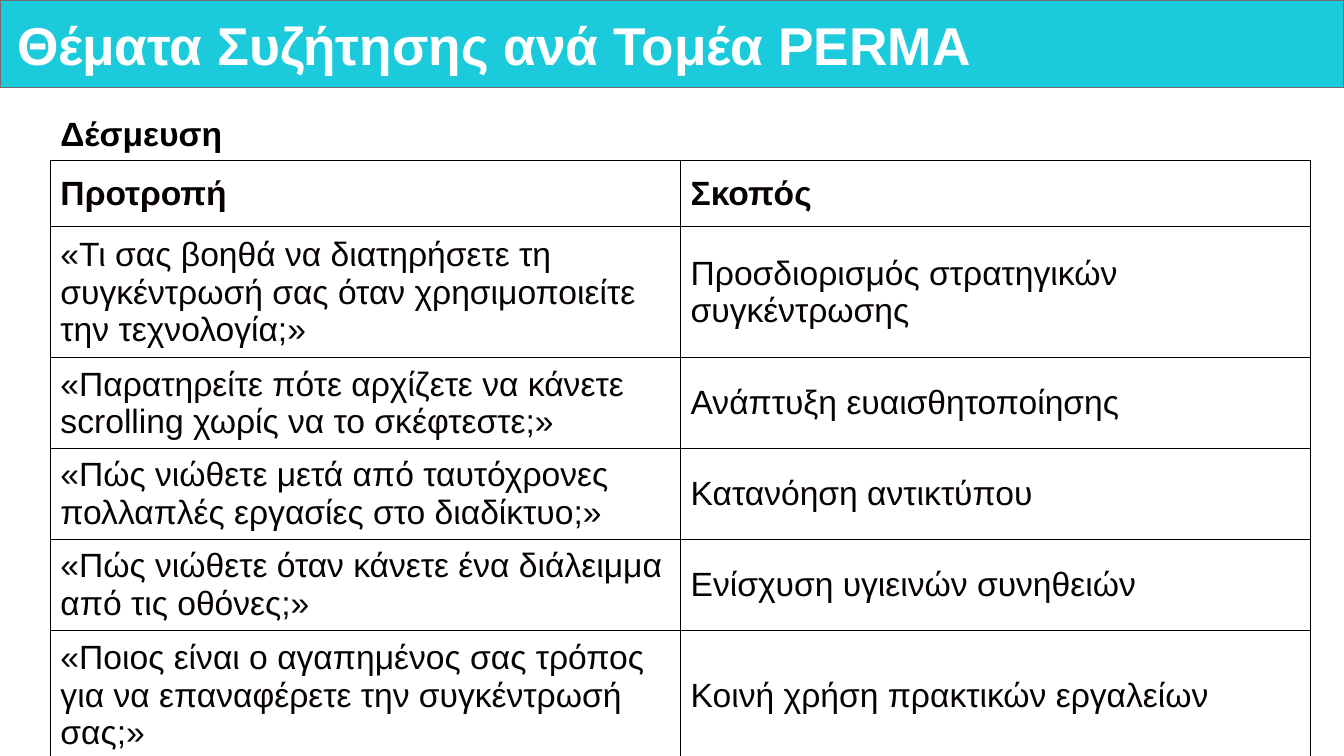
import pptx
import pptx.dml.color
import pptx.enum.shapes
import pptx.enum.text
import pptx.oxml
import pptx.oxml.ns
import pptx.util

WIDTH, HEIGHT = 13.33, 7.5
MARGIN = 0.5
COLUMN = 6.25
HEADER_ROW, PROMPT_ROW = 0.66, 0.88
MIDDLE = pptx.enum.text.MSO_ANCHOR.MIDDLE
TOP = pptx.enum.text.MSO_ANCHOR.TOP

TITLE_FONT = {"size": pptx.util.Pt(38), "bold": True, "name": "Arial"}
HEADING_FONT = {"size": pptx.util.Pt(24), "bold": True, "name": "Arial"}
BODY_FONT = {**HEADING_FONT, "bold": False}

ROWS = [
    ("Προτροπή", "Σκοπός"),
    ("«Τι σας βοηθά να διατηρήσετε τη συγκέντρωσή σας όταν χρησιμοποιείτε την τεχνολογία;»",
     "Προσδιορισμός στρατηγικών συγκέντρωσης"),
    ("«Παρατηρείτε πότε αρχίζετε να κάνετε scrolling χωρίς να το σκέφτεστε;»",
     "Ανάπτυξη ευαισθητοποίησης"),
    ("«Πώς νιώθετε μετά από ταυτόχρονες πολλαπλές εργασίες στο διαδίκτυο;»",
     "Κατανόηση αντικτύπου"),
    ("«Πώς νιώθετε όταν κάνετε ένα διάλειμμα από τις οθόνες;»",
     "Ενίσχυση υγιεινών συνηθειών"),
    ("«Ποιος είναι ο αγαπημένος σας τρόπος για να επαναφέρετε την συγκέντρωσή σας;»",
     "Κοινή χρήση πρακτικών εργαλείων"),
]


def inches(*lengths):
    return [pptx.util.Inches(length) for length in lengths]


def color(value):
    return pptx.dml.color.RGBColor.from_string(value)


def write(text_frame, text, font_values, font_color):
    paragraph = text_frame.paragraphs[0]
    run = paragraph.add_run()
    run.text = text
    for name, value in font_values.items():
        setattr(run.font, name, value)
    run.font.color.rgb = color(font_color)
    return paragraph


def add_banner(slide, height):
    banner = slide.shapes.add_shape(
        pptx.enum.shapes.MSO_SHAPE.RECTANGLE, *inches(0, 0, WIDTH, height))
    banner.shadow.inherit = False
    banner.fill.solid()
    banner.fill.fore_color.rgb = color("1BCBDC")
    banner.line.color.rgb = color("6C6E70")
    banner.line.width = pptx.util.Pt(1)


def add_text(slide, box, text, font_values, font_color, anchor, insets):
    """Add a wrapped text box; insets are horizontal and vertical inches."""
    text_frame = slide.shapes.add_textbox(*inches(*box)).text_frame
    horizontal, vertical = inches(*insets)
    frame_values = {
        "word_wrap": True, "vertical_anchor": anchor,
        "margin_left": horizontal, "margin_right": horizontal,
        "margin_top": vertical, "margin_bottom": vertical,
    }
    for name, value in frame_values.items():
        setattr(text_frame, name, value)
    return write(text_frame, text, font_values, font_color)


def add_borders(cell):
    properties = cell._tc.get_or_add_tcPr()
    for position, side in enumerate(("lnL", "lnR", "lnT", "lnB")):
        border = pptx.oxml.parse_xml(
            f'<a:{side} {pptx.oxml.ns.nsdecls("a")} w="12700"><a:solidFill>'
            f'<a:srgbClr val="000000"/></a:solidFill></a:{side}>')
        properties.insert(position, border)


def add_prompt_table(slide, left, top):
    heights = [HEADER_ROW] + [PROMPT_ROW] * (len(ROWS) - 1)
    columns = len(ROWS[0])
    table = slide.shapes.add_table(
        len(ROWS), columns,
        *inches(left, top, COLUMN * columns, sum(heights))).table
    for row, height in zip(table.rows, heights):
        row.height = pptx.util.Inches(height)
    for row_index, texts in enumerate(ROWS):
        font_values = BODY_FONT if row_index else HEADING_FONT
        for column_index, text in enumerate(texts):
            cell = table.cell(row_index, column_index)
            cell.fill.background()
            cell.vertical_anchor = MIDDLE
            write(cell.text_frame, text, font_values, "080301")
            add_borders(cell)


def main():
    presentation = pptx.Presentation()
    presentation.slide_width, presentation.slide_height = inches(WIDTH, HEIGHT)
    slide = presentation.slides.add_slide(presentation.slide_layouts[6])
    add_banner(slide, 0.87)
    title = add_text(slide, (0.11, 0.09, 13.06, 0.78),
                     "Θέματα Συζήτησης ανά Τομέα PERMA",
                     TITLE_FONT, "FFFFFF", MIDDLE, (0.06, 0.06))
    title.line_spacing = 0.9
    add_prompt_table(slide, MARGIN, 1.59)
    add_text(slide, (MARGIN, 1.07, 6.76, 0.5), "Δέσμευση",
             HEADING_FONT, "000000", TOP, (0.1, 0.05))
    presentation.save("out.pptx")


if __name__ == "__main__":
    main()
